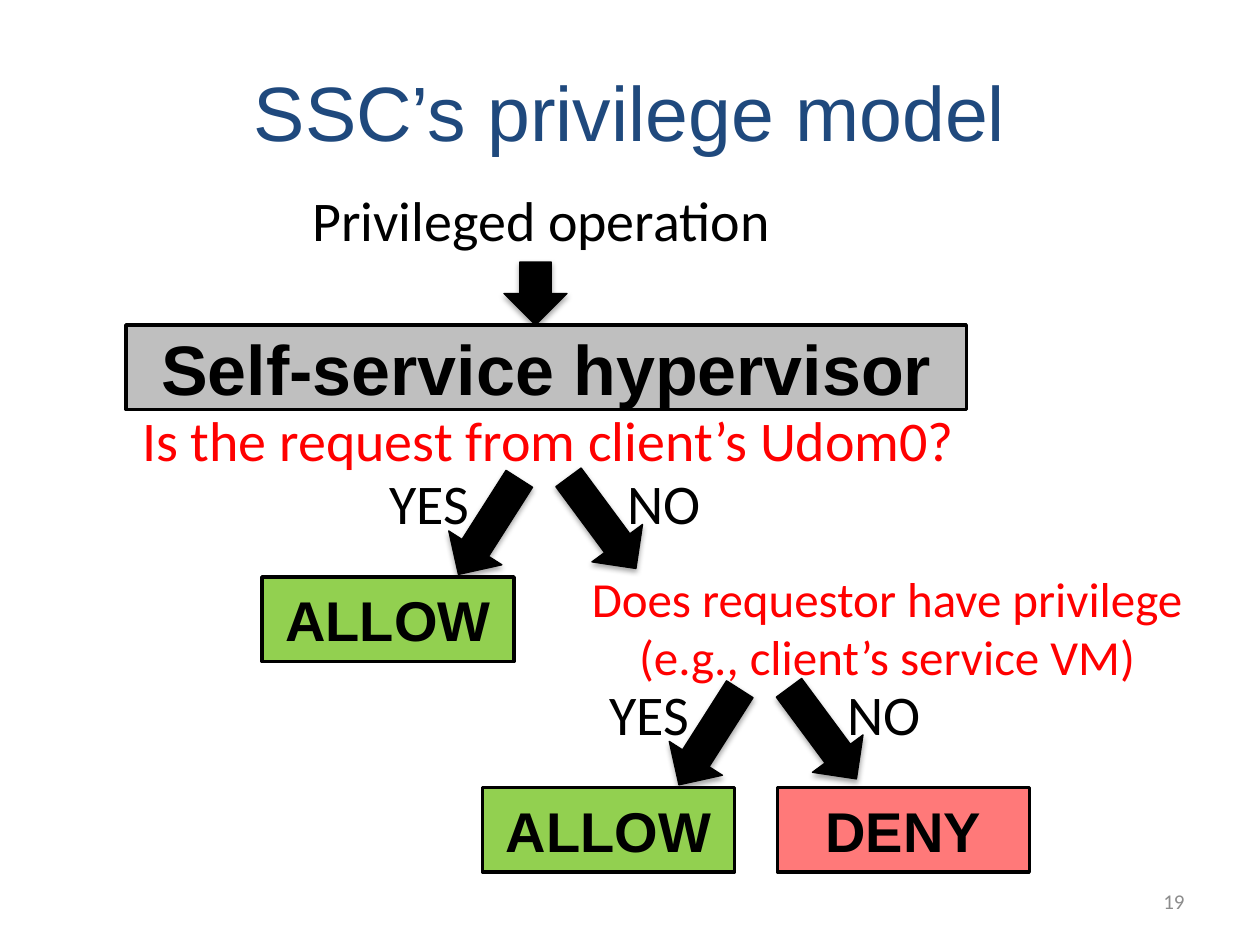
from pptx import Presentation
from pptx.dml.color import RGBColor
from pptx.enum import shapes, text
from pptx.util import Inches, Pt

BLACK = RGBColor(0x00, 0x00, 0x00)
RED = RGBColor(0xFF, 0x00, 0x00)
NAVY = RGBColor(0x1F, 0x49, 0x7D)
GREY = RGBColor(0xBF, 0xBF, 0xBF)
GREEN = RGBColor(0x92, 0xD0, 0x50)
PINK = RGBColor(0xFF, 0x79, 0x79)
NUMBER_GREY = RGBColor(0x8C, 0x8C, 0x8C)

CENTER = text.PP_ALIGN.CENTER
MIDDLE = text.MSO_ANCHOR.MIDDLE


def write(shape, words, size, color=BLACK, font="Calibri", bold=False, align=None, wrap=True):
    frame = shape.text_frame
    frame.word_wrap = wrap
    paragraph = frame.paragraphs[0]
    paragraph.alignment = align
    run = paragraph.add_run()
    run.text = words
    run.font.size = Pt(size)
    run.font.name = font
    run.font.bold = bold
    run.font.color.rgb = color


def add_filled(kind, left, top, width, height, fill, line_width):
    shape = slide.shapes.add_shape(
        kind, Inches(left), Inches(top), Inches(width), Inches(height))
    shape.fill.solid()
    shape.fill.fore_color.rgb = fill
    shape.line.color.rgb = BLACK
    shape.line.width = Pt(line_width)
    return shape


presentation = Presentation()
presentation.slide_width = Inches(10)
presentation.slide_height = Inches(7.5)
slide = presentation.slides.add_slide(presentation.slide_layouts[5])

title = slide.shapes.title
title.left, title.top = Inches(0.5), Inches(0.25)
title.width, title.height = Inches(9), Inches(1.25)
title.text_frame.vertical_anchor = MIDDLE
write(title, "SSC’s privilege model", 44, NAVY, "Arial", align=CENTER)

# Arrows keep the soft shadow of the theme; boxes are flat.
# Each decision repeats the first one, shifted right and down.
STEP_X, STEP_Y = 1.75, 1.67
arrows = [(4, 2.08, 0.5, 0)]
boxes = [("Self-service hypervisor", 1, 2.58, 6.67, GREY, 40),
         ("ALLOW", 2.08, 4.58, 2, GREEN, 32),
         ("ALLOW", 2.08 + STEP_X, 4.58 + STEP_Y, 2, GREEN, 32),
         ("DENY", 6.17, 4.58 + STEP_Y, 2, PINK, 32)]
labels = [("Privileged operation", 2.38, 1.42, 3.87, BLACK),
          ("Is the request from client’s Udom0?", 1.03, 3.17, 6.81, RED)]
for level in range(2):
    dx, dy = level * STEP_X, level * STEP_Y
    arrows += [(3.63 + dx, 3.73 + dy, 0.9, 32.5), (4.53 + dx, 3.7 + dy, 0.9, 323.5)]
    labels += [("YES", 2.99 + dx, 3.67 + dy, 0.84, BLACK),
               ("NO", 4.88 + dx, 3.67 + dy, 0.79, BLACK)]

for left, top, height, rotation in arrows:
    arrow = add_filled(shapes.MSO_SHAPE.DOWN_ARROW, left, top, 0.5, height, BLACK, 0.75)
    arrow.rotation = rotation

for words, left, top, width, fill, size in boxes:
    box = add_filled(shapes.MSO_SHAPE.RECTANGLE, left, top, width, 0.67, fill, 2)
    box.shadow.inherit = False
    box.text_frame.vertical_anchor = MIDDLE
    write(box, words, size, font="Arial", bold=True, align=CENTER)

for words, left, top, width, color in labels:
    label = slide.shapes.add_textbox(Inches(left), Inches(top), Inches(width), Inches(0.64))
    label.text_frame.auto_size = text.MSO_AUTO_SIZE.SHAPE_TO_FIT_TEXT
    write(label, words, 32, color, wrap=False)

question = slide.shapes.add_textbox(Inches(4.5), Inches(4.46), Inches(5.08), Inches(1.04))
question.text_frame.auto_size = text.MSO_AUTO_SIZE.SHAPE_TO_FIT_TEXT
write(question, "Does requestor have privilege (e.g., client’s service VM)", 28, RED, align=CENTER)

slide_number = slide.shapes.add_textbox(Inches(7.17), Inches(6.95), Inches(2.33), Inches(0.4))
slide_number.text_frame.vertical_anchor = MIDDLE
write(slide_number, "19", 12, NUMBER_GREY, align=text.PP_ALIGN.RIGHT)

presentation.save("out.pptx")
